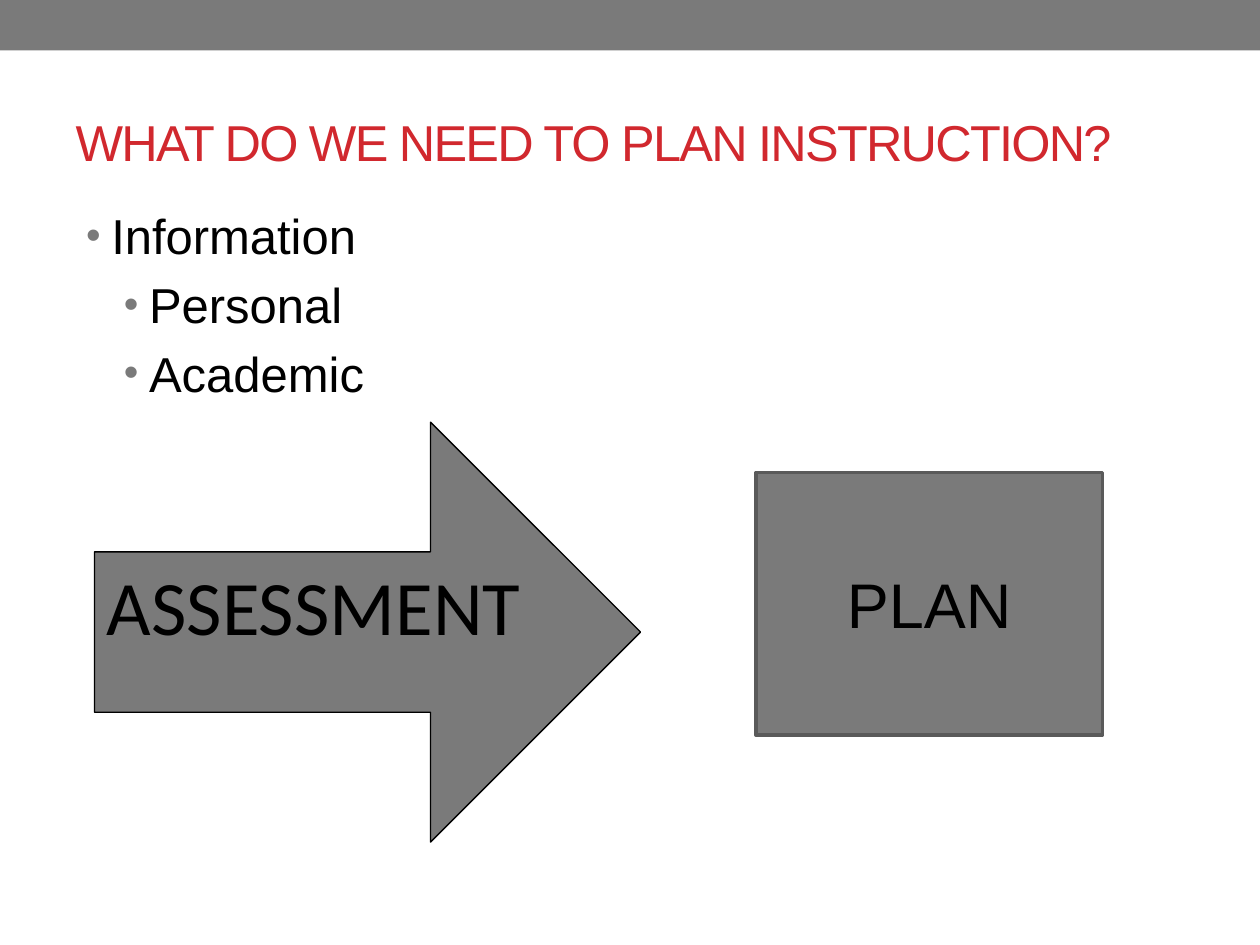
from dataclasses import dataclass

from lxml import etree
from pptx import Presentation
from pptx.dml.color import RGBColor
from pptx.enum.shapes import MSO_SHAPE
from pptx.enum.text import MSO_ANCHOR, MSO_AUTO_SIZE, PP_ALIGN
from pptx.oxml.ns import qn
from pptx.util import Pt

RECTANGLE, RIGHT_ARROW = MSO_SHAPE.RECTANGLE, MSO_SHAPE.RIGHT_ARROW
TOP, MIDDLE = MSO_ANCHOR.TOP, MSO_ANCHOR.MIDDLE
LEFT, CENTER = PP_ALIGN.LEFT, PP_ALIGN.CENTER
NO_AUTOFIT = MSO_AUTO_SIZE.NONE


@dataclass(frozen=True)
class Theme:
    """Colours, fonts and type sizes of the slide."""
    grey: str = "7A7A7A"
    dark_grey: str = "5A5A5A"
    red: str = "D1282E"
    black: str = "000000"
    font: str = "Arial"
    arrow_font: str = "Calibri"
    title_size: float = 28.8
    list_size: float = 28
    arrow_size: float = 44
    plan_size: float = 36


THEME = Theme()


def write(paragraph, text, *, size, color=THEME.black, font=THEME.font,
          align=LEFT, tracking=None):
    """Write one formatted run into a paragraph."""
    paragraph.alignment = align
    run = paragraph.add_run()
    run.text = text
    run.font.size = Pt(size)
    run.font.name = font
    run.font.color.rgb = RGBColor.from_string(color)
    if tracking is not None:
        run.font._element.set("spc", str(int(tracking * 100)))


def place(shape, box):
    """Move a shape to a box given in points."""
    shape.left, shape.top, shape.width, shape.height = map(Pt, box)


def prepare_frame(shape, anchor):
    """Return a wrapping text frame with a fixed size and anchor."""
    frame = shape.text_frame
    frame.word_wrap = True
    frame.auto_size = NO_AUTOFIT
    frame.vertical_anchor = anchor
    return frame


def set_bullet(paragraph, indent, hanging):
    """Give a paragraph a small grey bullet with a hanging indent."""
    properties = paragraph._p.get_or_add_pPr()
    properties.set("marL", str(Pt(indent)))
    properties.set("indent", str(-Pt(hanging)))
    color = etree.SubElement(properties, qn("a:buClr"))
    etree.SubElement(color, qn("a:srgbClr"), val=THEME.grey)
    etree.SubElement(properties, qn("a:buSzPct"), val="85000")
    etree.SubElement(properties, qn("a:buFont"), typeface=THEME.font)
    etree.SubElement(properties, qn("a:buChar"), char="•")


def add_block(slide, kind, box, line=None, line_width=0):
    """Add a grey preset shape, outlined if a line colour is given."""
    block = slide.shapes.add_shape(kind, *map(Pt, box))
    block.shadow.inherit = False
    block.fill.solid()
    block.fill.fore_color.rgb = RGBColor.from_string(THEME.grey)
    if line:
        block.line.color.rgb = RGBColor.from_string(line)
        block.line.width = Pt(line_width)
    else:
        block.line.fill.background()
    return block


def fill_title(slide, box, text):
    """Place and write the slide title."""
    title = slide.shapes.title
    place(title, box)
    frame = prepare_frame(title, MIDDLE)
    write(frame.paragraphs[0], text, size=THEME.title_size, color=THEME.red, tracking=-1)


def fill_list(slide, box, items):
    """Place the body and write its (level, text) items."""
    body = slide.placeholders[1]
    place(body, box)
    frame = prepare_frame(body, TOP)
    for index, (level, text) in enumerate(items):
        item = frame.add_paragraph() if index else frame.paragraphs[0]
        item.level = level
        write(item, text, size=THEME.list_size)
        set_bullet(item, indent=14.4 + 21.6 * level, hanging=14.4)


def add_assessment(slide, box):
    """Add the assessment arrow."""
    arrow = add_block(slide, RIGHT_ARROW, box, THEME.black, 0.75)
    arrow.adjustments[0] = 0.382
    arrow.adjustments[1] = 0.5
    frame = prepare_frame(arrow, TOP)
    write(frame.paragraphs[0], "ASSESSMENT", size=THEME.arrow_size, font=THEME.arrow_font)


def add_plan(slide, box):
    """Add the plan box."""
    plan = add_block(slide, RECTANGLE, box, THEME.dark_grey, 2.08)
    frame = prepare_frame(plan, MIDDLE)
    write(frame.paragraphs[0], "PLAN", size=THEME.plan_size, align=CENTER)


def main():
    """Build and save the slide."""
    deck = Presentation()
    deck.slide_width, deck.slide_height = Pt(720), Pt(540)
    slide = deck.slides.add_slide(deck.slide_layouts[1])
    add_block(slide, RECTANGLE, (0, 0, 720, 28.8))
    fill_title(slide, (36, 42, 648, 78), "WHAT DO WE NEED TO PLAN INSTRUCTION?")
    fill_list(slide, (42, 114, 642, 366),
              [(0, "Information"), (1, "Personal"), (1, "Academic")])
    add_assessment(slide, (54, 241.2, 312, 240))
    add_plan(slide, (432, 270, 198, 150))
    deck.save("out.pptx")


if __name__ == "__main__":
    main()
